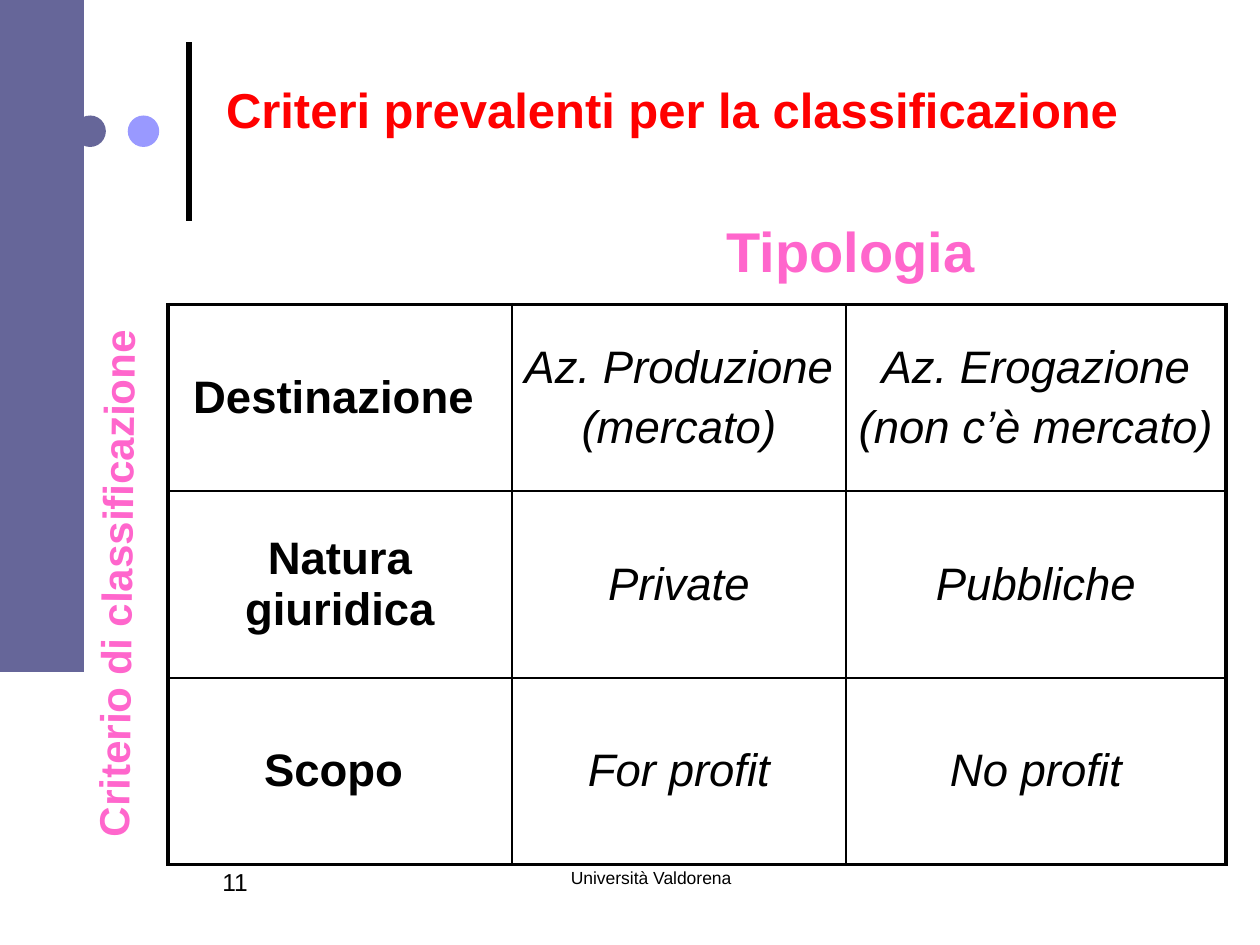
import pptx
import pptx.util
import pptx.dml.color
import pptx.enum.shapes
import pptx.enum.text
import pptx.oxml
import pptx.oxml.ns
from dataclasses import dataclass

Pt = pptx.util.Pt
MSO_SHAPE = pptx.enum.shapes.MSO_SHAPE
ANCHOR = pptx.enum.text.MSO_ANCHOR
ALIGN = pptx.enum.text.PP_ALIGN


@dataclass(frozen=True)
class Theme:
    font: str = "Arial"
    ink: str = "000000"
    title: str = "FF0000"
    heading: str = "FF66CC"
    band: str = "666699"
    dot: str = "9999FF"
    title_size: int = 28
    heading_size: int = 32
    side_size: int = 24
    cell_size: int = 26
    number_size: int = 14
    footer_size: int = 10
    thick: float = 2.25
    thin: float = 1


THEME = Theme()

LABELS = [
    ("Criteri prevalenti per la classificazione", (108, 42, 552, 41),
     dict(size=THEME.title_size, color=THEME.title, bold=True)),
    ("Tipologia ", (295.5, 120, 390, 45),
     dict(size=THEME.heading_size, color=THEME.heading, bold=True)),
    ("Criterio di classificazione", (-87, 315.5, 306, 36),
     dict(size=THEME.side_size, color=THEME.heading, bold=True, rotation=270.7)),
    ("Università Valdorena", (258, 492, 228, 36), dict(size=THEME.footer_size)),
    ("11", (120, 492, 102, 36), dict(size=THEME.number_size, align=ALIGN.LEFT)),
]

DECOR = [
    (MSO_SHAPE.OVAL, (42.5, 66, 18, 18), THEME.band),
    (MSO_SHAPE.OVAL, (73, 66, 18, 18), THEME.dot),
    (MSO_SHAPE.RECTANGLE, (0, 0, 48, 384), THEME.band),
]

TITLE_RULE = (108, 126, 108, 24)

ROWS = [
    ("Destinazione ", "Az. Produzione\n(mercato)", "Az. Erogazione\n(non c’è mercato)"),
    ("Natura giuridica", "Private", "Pubbliche"),
    ("Scopo ", "For profit", "No profit"),
]
TABLE_AT = (96, 174)
COLUMN_WIDTHS = (196.5, 191, 217)
ROW_HEIGHT = 106.67


def rgb(value):
    return pptx.dml.color.RGBColor.from_string(value)


def write(tf, text, size, color=THEME.ink, bold=False, italic=False,
          align=ALIGN.CENTER, before=0):
    tf.word_wrap = True
    for i, line in enumerate(text.split("\n")):
        p = tf.add_paragraph() if i else tf.paragraphs[0]
        p.alignment = align
        p.space_before = Pt(before)
        r = p.add_run()
        r.text = line
        r.font.name = THEME.font
        r.font.size = Pt(size)
        r.font.bold = bold
        r.font.italic = italic
        r.font.color.rgb = rgb(color)


def add_label(s, text, box, rotation=0, **style):
    sp = s.shapes.add_textbox(*map(Pt, box))
    sp.rotation = rotation
    write(sp.text_frame, text, **style)


def add_decor(s, kind, box, color):
    sp = s.shapes.add_shape(kind, *map(Pt, box))
    sp.shadow.inherit = False
    sp.fill.solid()
    sp.fill.fore_color.rgb = rgb(color)
    sp.line.fill.background()


def add_rule(s, ends):
    rule = s.shapes.add_connector(pptx.enum.shapes.MSO_CONNECTOR.STRAIGHT, *map(Pt, ends))
    rule.line.color.rgb = rgb(THEME.ink)
    rule.line.width = Pt(3)
    rule._element.spPr.append(pptx.oxml.parse_xml(
        f'<a:effectLst {pptx.oxml.ns.nsdecls("a")}/>'))


def set_borders(cell, edges):
    tcPr = cell._tc.get_or_add_tcPr()
    for i, (side, outer) in enumerate(edges.items()):
        width = Pt(THEME.thick if outer else THEME.thin)
        tcPr.insert(i, pptx.oxml.parse_xml(
            f'<a:ln{side} {pptx.oxml.ns.nsdecls("a")} w="{width}"><a:solidFill>'
            f'<a:srgbClr val="{THEME.ink}"/></a:solidFill></a:ln{side}>'))


def add_grid(s):
    last_row, last_col = len(ROWS) - 1, len(COLUMN_WIDTHS) - 1
    size = (sum(COLUMN_WIDTHS), ROW_HEIGHT * len(ROWS))
    table = s.shapes.add_table(len(ROWS), len(COLUMN_WIDTHS),
                               *map(Pt, TABLE_AT + size)).table
    table.first_row = table.horz_banding = False
    for column, width in zip(table.columns, COLUMN_WIDTHS):
        column.width = Pt(width)
    for r, texts in enumerate(ROWS):
        table.rows[r].height = Pt(ROW_HEIGHT)
        for c, text in enumerate(texts):
            cell = table.cell(r, c)
            cell.fill.background()
            cell.vertical_anchor = ANCHOR.MIDDLE
            cell.margin_left = cell.margin_right = Pt(6)
            write(cell.text_frame, text, THEME.cell_size,
                  bold=c == 0, italic=c > 0, before=5)
            set_borders(cell, {"L": c == 0, "R": c == last_col,
                               "T": r == 0, "B": r == last_row})


def main():
    prs = pptx.Presentation()
    prs.slide_width, prs.slide_height = Pt(720), Pt(540)
    s = prs.slides.add_slide(prs.slide_layouts[6])
    add_rule(s, TITLE_RULE)
    for kind, box, color in DECOR:
        add_decor(s, kind, box, color)
    add_grid(s)
    for text, box, style in LABELS:
        add_label(s, text, box, **style)
    prs.save("out.pptx")


if __name__ == "__main__":
    main()
